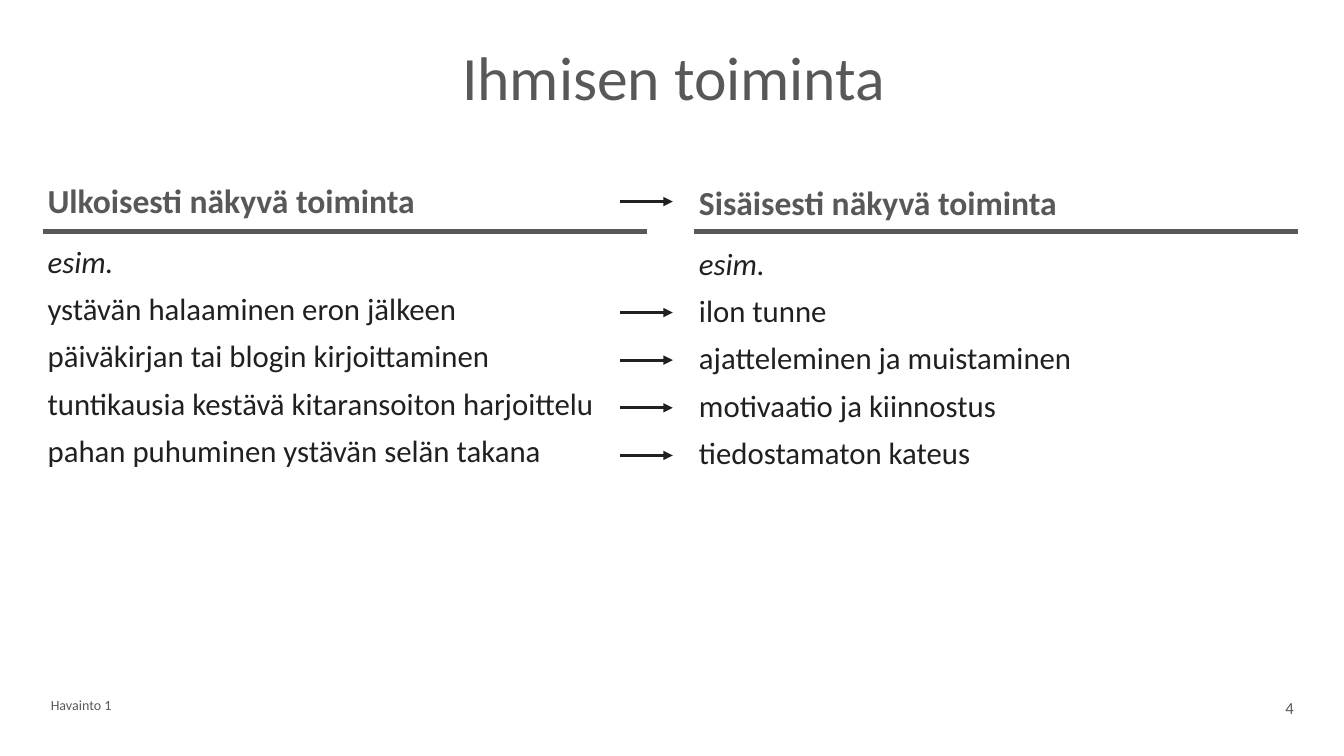
from lxml import etree
from pptx import Presentation
from pptx.dml.color import RGBColor
from pptx.enum.shapes import MSO_CONNECTOR
from pptx.enum.text import MSO_ANCHOR, PP_ALIGN
from pptx.oxml.ns import qn
from pptx.util import Cm, Pt

STRAIGHT = MSO_CONNECTOR.STRAIGHT
TOP, MIDDLE, BOTTOM = MSO_ANCHOR.TOP, MSO_ANCHOR.MIDDLE, MSO_ANCHOR.BOTTOM
LEFT, CENTER, RIGHT = PP_ALIGN.LEFT, PP_ALIGN.CENTER, PP_ALIGN.RIGHT
GREY, INK = "585858", "202020"
COLUMN_WIDTH = 30.45
RULE_Y = 11.68

OUTER = ["esim.", "ystävän halaaminen eron jälkeen",
         "päiväkirjan tai blogin kirjoittaminen",
         "tuntikausia kestävä kitaransoiton harjoittelu",
         "pahan puhuminen ystävän selän takana"]
INNER = ["esim.", "ilon tunne", "ajatteleminen ja muistaminen",
         "motivaatio ja kiinnostus", "tiedostamaton kateus"]


def color(hex_code):
    return RGBColor.from_string(hex_code)


def add_text(slide, box, lines, size, ink=GREY, anchor=TOP, align=LEFT,
             bold=False, spacing=0.9):
    frame = slide.shapes.add_textbox(*map(Cm, box)).text_frame
    frame.word_wrap = True
    frame.vertical_anchor = anchor
    for i, line in enumerate(lines):
        paragraph = frame.add_paragraph() if i else frame.paragraphs[0]
        paragraph.text = line
        paragraph.alignment = align
        paragraph.line_spacing = spacing
        if i:
            paragraph.space_before = Pt(20)
        font = paragraph.font
        font.name, font.size, font.bold = "Calibri", Pt(size), bold
        font.color.rgb = color(ink)
    return frame


def add_line(slide, x, y, length, width, ink, arrow=False):
    line = slide.shapes.add_connector(STRAIGHT, Cm(x), Cm(y), Cm(x + length), Cm(y))
    line.line.width = Pt(width)
    line.line.color.rgb = color(ink)
    if arrow:
        etree.SubElement(line.line._get_or_add_ln(), qn("a:tailEnd"), type="triangle")
    etree.SubElement(line._element.spPr, qn("a:effectLst"))


def add_column(slide, left, top, heading, examples):
    """Heading, rule and examples of one kind of activity."""
    add_line(slide, left, RULE_Y, COLUMN_WIDTH, 7, GREY)
    add_text(slide, (left, top, COLUMN_WIDTH, 2.77), [heading], 48,
             anchor=MIDDLE, bold=True)
    body = add_text(slide, (left, top + 3.47, COLUMN_WIDTH, 18.29), examples, 44, INK)
    body.paragraphs[0].font.italic = True


def add_arrows(slide, left, heading_y, first_y, pitch, count):
    """One arrow between the headings, then one for each pair of examples."""
    for y in [heading_y] + [first_y + i * pitch for i in range(count)]:
        add_line(slide, left, y, 2.64, 4.5, INK, arrow=True)


def add_footer(slide, left, top, width):
    """Book name on the left, page number on the right."""
    add_text(slide, (left, top, 22.86, 2.03), ["Havainto 1"], 20,
             anchor=BOTTOM, spacing=1)
    add_text(slide, (left + width - 15.24, top + 0.22, 15.24, 2.03), ["4"], 24,
             anchor=BOTTOM, align=RIGHT, spacing=1)


def main():
    deck = Presentation()
    deck.slide_width, deck.slide_height = Cm(67.74), Cm(38.1)
    slide = deck.slides.add_slide(deck.slide_layouts[6])

    # Title
    add_text(slide, (2.31, 1.37, 63.3, 5.38), ["Ihmisen toiminta"], 88,
             anchor=MIDDLE, align=CENTER)
    # Outer and inner activity, linked by arrows
    add_column(slide, 2.15, 8.84, "Ulkoisesti näkyvä toiminta", OUTER)
    add_column(slide, 34.98, 8.94, "Sisäisesti näkyvä toiminta", INNER)
    add_arrows(slide, 31.27, 10.16, 15.75, 2.4, len(INNER) - 1)
    # Footer
    add_footer(slide, 2.31, 34.04, 63.15)

    deck.save("out.pptx")


if __name__ == "__main__":
    main()
